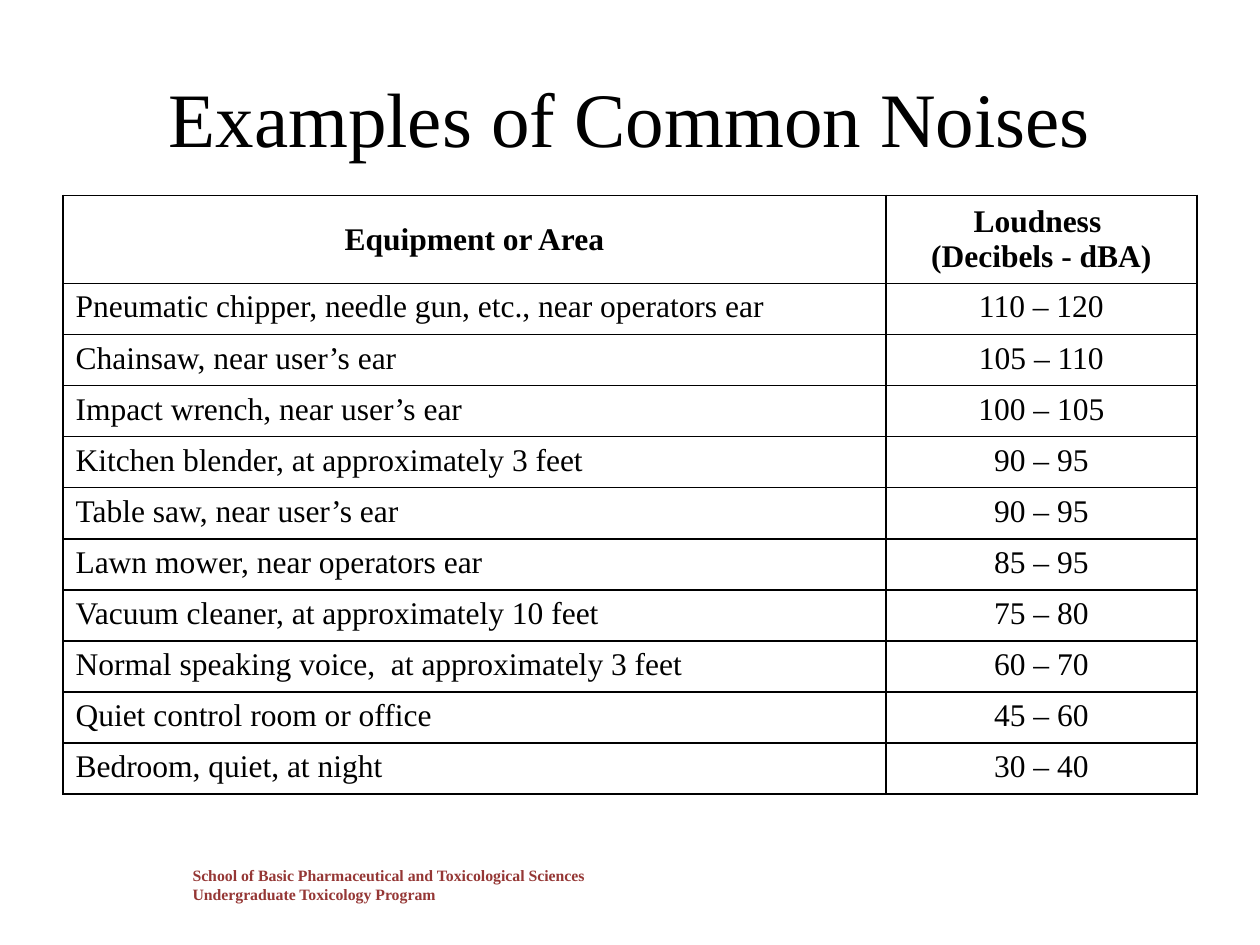
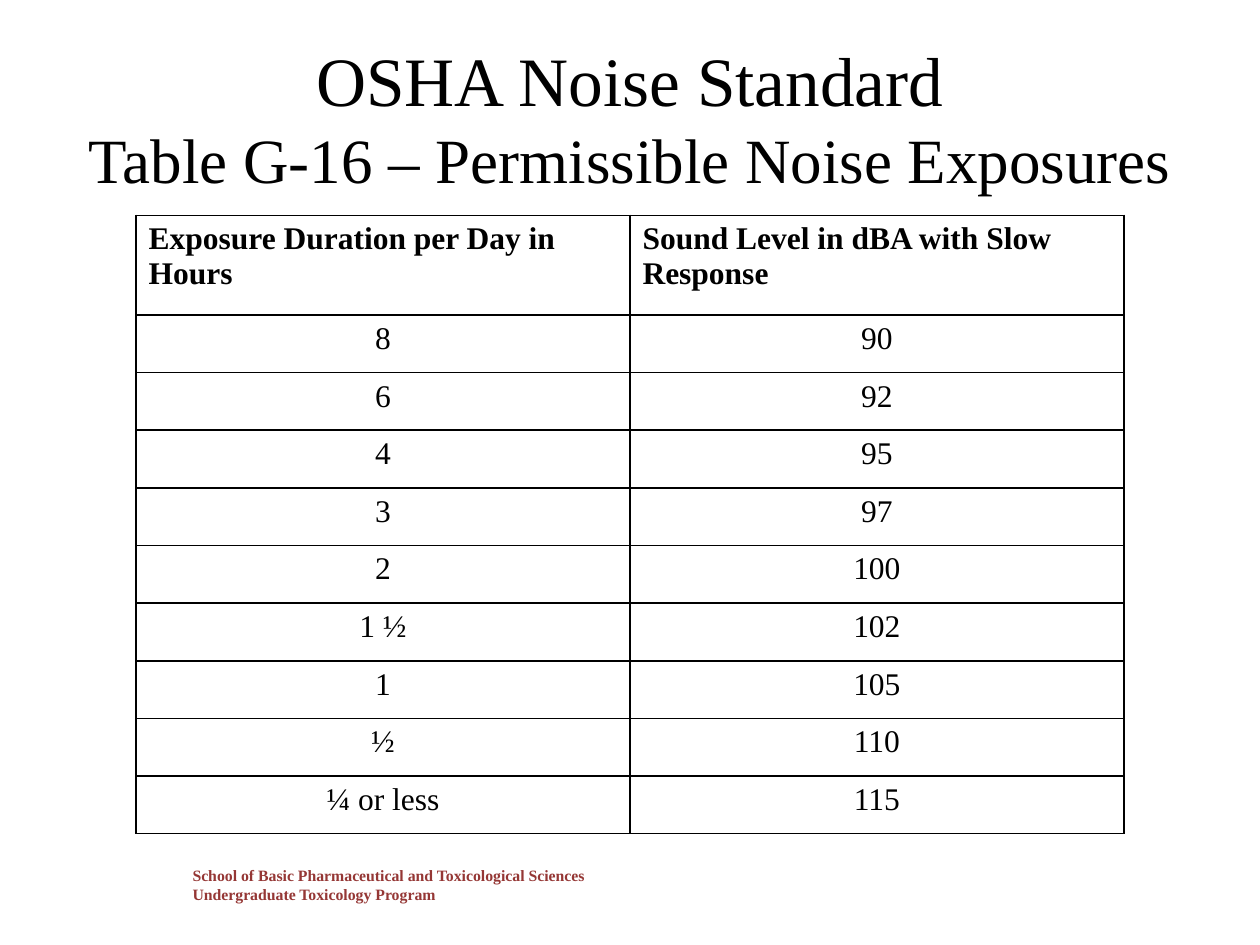
from lxml import etree
from pptx import Presentation
from pptx.dml.color import RGBColor
from pptx.enum.text import MSO_ANCHOR, MSO_AUTO_SIZE, PP_ALIGN
from pptx.oxml.ns import qn
from pptx.util import Inches, Pt

LEFT, CENTER = PP_ALIGN.LEFT, PP_ALIGN.CENTER
TOP, MIDDLE = MSO_ANCHOR.TOP, MSO_ANCHOR.MIDDLE
NO_FIT, GROW = MSO_AUTO_SIZE.NONE, MSO_AUTO_SIZE.SHAPE_TO_FIT_TEXT

BLACK = RGBColor(0x00, 0x00, 0x00)
WHITE = RGBColor(0xFF, 0xFF, 0xFF)
MAROON = RGBColor(0x95, 0x37, 0x35)
FONT = "Times New Roman"
TITLE_ONLY = 5
BORDER_WIDTH = Pt(1)
TABLE_SIZE = 18

FOOTER = [
    "School of Basic Pharmaceutical and Toxicological Sciences",
    "Undergraduate Toxicology Program",
]

COMMON_NOISES = [
    ("Equipment or Area", "Loudness \n(Decibels - dBA)"),
    ("Pneumatic chipper, needle gun, etc., near operators ear", "110 – 120"),
    ("Chainsaw, near user’s ear", "105 – 110"),
    ("Impact wrench, near user’s ear", "100 – 105"),
    ("Kitchen blender, at approximately 3 feet", "90 – 95"),
    ("Table saw, near user’s ear", "90 – 95"),
    ("Lawn mower, near operators ear", "85 – 95"),
    ("Vacuum cleaner, at approximately 10 feet", "75 – 80"),
    ("Normal speaking voice,  at approximately 3 feet", "60 – 70"),
    ("Quiet control room or office", "45 – 60"),
    ("Bedroom, quiet, at night", "30 – 40"),
]

PERMISSIBLE_EXPOSURES = [
    ("Exposure Duration per Day in Hours", "Sound Level in dBA with Slow Response"),
    ("8", "90"),
    ("6", "92"),
    ("4", "95"),
    ("3", "97"),
    ("2", "100"),
    ("1 ½", "102"),
    ("1", "105"),
    ("½", "110"),
    ("¼ or less", "115"),
]


class Deck:
    def __init__(self):
        self.presentation = Presentation()
        self.presentation.slide_width = Inches(10)
        self.presentation.slide_height = Inches(7.5)
        self.slide = None

    def add_slide(self, title_lines):
        layout = self.presentation.slide_layouts[TITLE_ONLY]
        self.slide = self.presentation.slides.add_slide(layout)
        self.slide.background.fill.solid()
        self.slide.background.fill.fore_color.rgb = WHITE
        self.add_footer()
        self.set_title(title_lines)

    def add_run(self, paragraph, text, size, color=BLACK, bold=False):
        run = paragraph.add_run()
        run.text = text
        run.font.name = FONT
        run.font.size = Pt(size)
        run.font.bold = bold
        run.font.color.rgb = color

    def add_paragraphs(self, frame, lines, size, alignment, color=BLACK, bold=False):
        for index, line in enumerate(lines):
            paragraph = frame.add_paragraph() if index else frame.paragraphs[0]
            paragraph.alignment = alignment
            self.add_run(paragraph, line, size, color, bold)

    def set_title(self, lines):
        title = self.slide.shapes.title
        title.left, title.top = Inches(0.5), Inches(0.3)
        title.width, title.height = Inches(9), Inches(1.25)
        frame = title.text_frame
        frame.word_wrap = True
        frame.auto_size = NO_FIT
        frame.vertical_anchor = MIDDLE
        paragraph = frame.paragraphs[0]
        paragraph.alignment = CENTER
        for index, (text, size) in enumerate(lines):
            if index:
                paragraph.add_line_break()
            self.add_run(paragraph, text, size)

    def add_footer(self):
        box = self.slide.shapes.add_textbox(
            Inches(1.43), Inches(6.82), Inches(7.17), Inches(0.4))
        box.text_frame.word_wrap = True
        box.text_frame.auto_size = GROW
        self.add_paragraphs(box.text_frame, FOOTER, 9, LEFT, MAROON, True)

    def add_borders(self, cell):
        properties = cell._tc.get_or_add_tcPr()
        for side in ("a:lnL", "a:lnR", "a:lnT", "a:lnB"):
            line = etree.SubElement(properties, qn(side), w=str(BORDER_WIDTH))
            fill = etree.SubElement(line, qn("a:solidFill"))
            etree.SubElement(fill, qn("a:srgbClr"), val=str(BLACK))

    def add_table(self, rows, left, top, column_widths, height, header_height,
                  header_alignment, header_anchor, body_alignments):
        row_height = (height - header_height) / (len(rows) - 1)
        table = self.slide.shapes.add_table(
            len(rows), len(column_widths), Inches(left), Inches(top),
            Inches(sum(column_widths)), Inches(height)).table
        table.first_row = False
        table.horz_banding = False
        for column, width in zip(table.columns, column_widths):
            column.width = Inches(width)
        for row_index, values in enumerate(rows):
            header = row_index == 0
            table.rows[row_index].height = Inches(header_height if header else row_height)
            for column_index, value in enumerate(values):
                cell = table.cell(row_index, column_index)
                alignment = header_alignment if header else body_alignments[column_index]
                cell.vertical_anchor = header_anchor if header else TOP
                self.add_borders(cell)
                cell.fill.solid()
                cell.fill.fore_color.rgb = WHITE
                self.add_paragraphs(cell.text_frame, value.split("\n"),
                                    TABLE_SIZE, alignment, bold=header)


def main():
    deck = Deck()

    deck.add_slide([("Examples of Common Noises", 44)])
    deck.add_table(COMMON_NOISES, 0.5, 1.55, (6.53, 2.47), 4.46, 4.46 / len(COMMON_NOISES),
                   CENTER, MIDDLE, (LEFT, CENTER))

    deck.add_slide([("OSHA Noise Standard", 39.6),
                    ("Table G-16 – Permissible Noise Exposures", 36)])
    deck.add_table(PERMISSIBLE_EXPOSURES, 1.08, 1.71, (3.92, 3.92), 4.91, 0.79,
                   LEFT, TOP, (CENTER, CENTER))

    deck.presentation.save("out.pptx")


if __name__ == "__main__":
    main()
